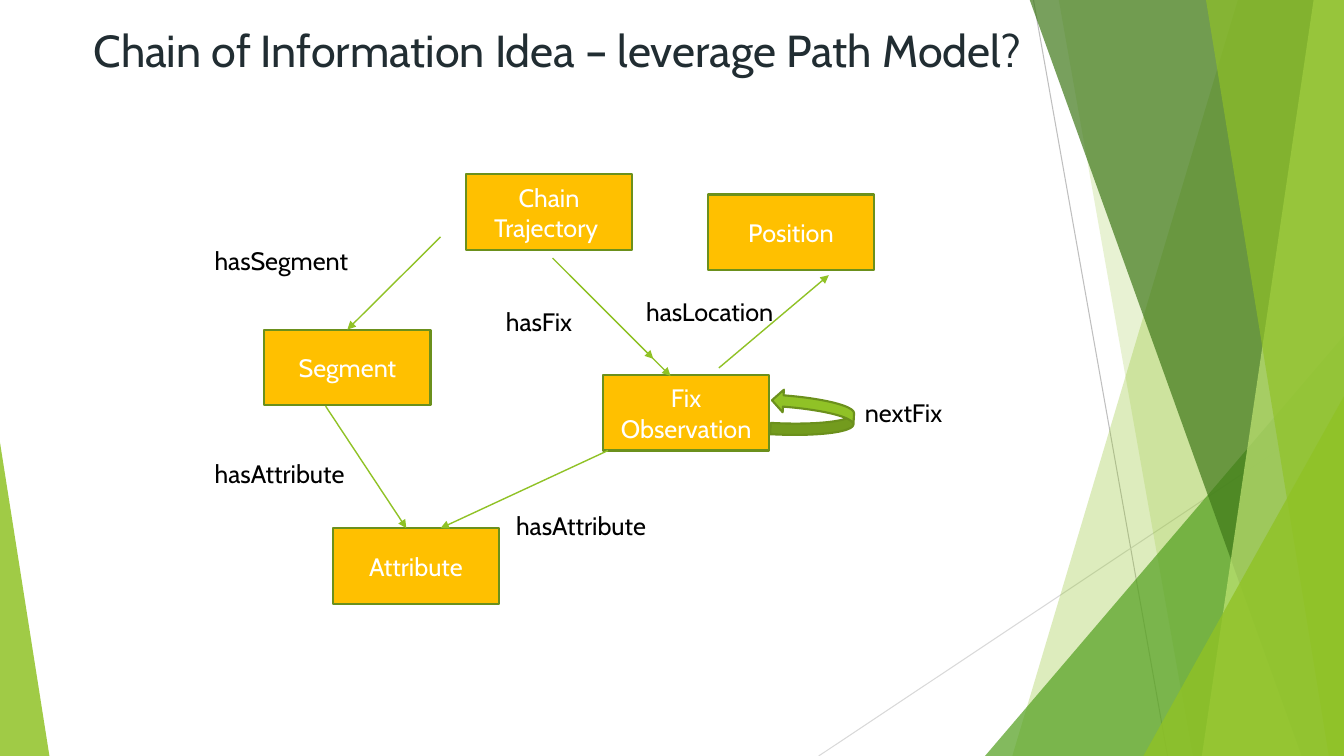
"""Build the slide about the chain of information idea."""
from lxml.etree import SubElement
from pptx import Presentation
from pptx.dml.color import RGBColor
from pptx.enum.shapes import MSO_CONNECTOR as Connector, MSO_SHAPE as Preset
from pptx.enum.text import MSO_ANCHOR as Anchor, PP_ALIGN as Align
from pptx.oxml.ns import qn
from pptx.util import Pt

PX = 9144
FONT = "Cabin"
COLORS = {
    "lime": "90C226", "green": "54A021", "forest": "3F7819", "pale": "C0E474",
    "gray": "BFBFBF", "light gray": "D9D9D9", "gold": "FFC000",
    "outline": "6B901C", "title": "212D32", "white": "FFFFFF", "black": "000000",
}


def paint(shape, color, opacity=100, outline=None):
    shape.shadow.inherit = False
    shape.fill.solid()
    shape.fill.fore_color.rgb = RGBColor.from_string(COLORS[color])
    if opacity < 100:
        fill_color = shape._element.spPr.find(qn("a:solidFill"))[0]
        SubElement(fill_color, qn("a:alpha"), val=str(opacity * 1000))
    if outline:
        shape.line.color.rgb = RGBColor.from_string(COLORS[outline])
        shape.line.width = Pt(1.5)
    else:
        shape.line.fill.background()


def add_line(points, color, width, arrow=False):
    line = shapes.add_connector(Connector.STRAIGHT, *[value * PX for value in points])
    line.line.color.rgb = RGBColor.from_string(COLORS[color])
    line.line.width = Pt(width)
    if arrow:
        SubElement(line.line._get_or_add_ln(), qn("a:tailEnd"), type="triangle")
    SubElement(line._element.spPr, qn("a:effectLst"))
    return line


presentation = Presentation()
presentation.slide_width = 1333 * PX
presentation.slide_height = 750 * PX
slide = presentation.slides.add_slide(presentation.slide_layouts[5])
shapes = slide.shapes

add_line((1025, 0, 1158, 750), "gray", 0.75)
add_line((1333, 403, 812, 750), "light gray", 0.75)

BANDS = [
    (1228, 1004, "lime", 30),
    (1050, 1183, "lime", 20),
    ("triangle", (977, 333, 356, 417), 1, "green", 72),
    (1021, 1291, "forest", 70),
    (1303, 1192, "pale", 70),
    (1196, 1318, "lime", 65),
    ("triangle", (1134, 393, 199, 357), 1, "lime", 80),
    ("triangle", (0, 439, 49, 311), 0, "lime", 85),
]
for *outline, color, opacity in BANDS:
    if outline[0] == "triangle":
        _, box, peak = outline
        band = shapes.add_shape(Preset.ISOSCELES_TRIANGLE, *[value * PX for value in box])
        band.adjustments[0] = peak
    else:
        top_left, bottom_left = outline
        builder = shapes.build_freeform(top_left, -1, scale=PX)
        builder.add_line_segments([(1333, -1), (1333, 750), (bottom_left, 750)])
        band = builder.convert_to_shape()
    paint(band, color, opacity)

title = shapes.title
title.left, title.top, title.width, title.height = [
    value * PX for value in (19, 18, 1068, 94)]
title.text_frame.text = "Chain of Information Idea – leverage Path Model?"
title.text_frame.vertical_anchor = Anchor.TOP
heading = title.text_frame.paragraphs[0]
heading.alignment = Align.CENTER
heading.font.name = FONT
heading.font.size = Pt(32)
heading.font.color.rgb = RGBColor.from_string(COLORS["title"])
shapes._spTree.append(title._element)

CONCEPTS = [
    ("Chain\nTrajectory ", 462, 173),
    ("Attribute", 330, 524),
    ("Position", 702, 193),
    ("Fix Observation", 598, 372),
    ("Segment", 262, 327),
]
texts = []
concepts = {}
for name, left, top in CONCEPTS:
    concept = shapes.add_shape(Preset.RECTANGLE, left * PX, top * PX, 165 * PX, 75 * PX)
    paint(concept, "gold", outline="outline")
    concept.text_frame.text = name
    concept.text_frame.word_wrap = True
    concept.text_frame.vertical_anchor = Anchor.MIDDLE
    concepts[name] = concept
    texts.append((concept.text_frame, "white", Align.CENTER))

RELATIONS = [
    (548, 256, 648, 356),
    (565, 273, 665, 373),
    (323, 403, 403, 524),
    (713, 365, 822, 273),
    (603, 447, 437, 524),
]
for points in RELATIONS:
    add_line(points, "lime", 1, arrow=True)
has_segment = add_line((437, 235, 345, 327), "lime", 1, arrow=True)
has_segment.end_connect(concepts["Segment"], 0)

next_fix = shapes.add_shape(
    Preset.CURVED_RIGHT_ARROW, 765 * PX, 388 * PX, 82 * PX, 45 * PX)
next_fix.rotation = 183.1
paint(next_fix, "lime", outline="outline")

LABELS = [
    ("hasLocation", 631, 289, 168),
    ("hasFix", 492, 299, 104),
    ("hasAttribute", 203, 450, 172),
    ("hasSegment", 203, 238, 180),
    ("hasAttribute", 502, 501, 172),
    ("nextFix", 848, 389, 104),
]
for name, left, top, width in LABELS:
    label = shapes.add_textbox(left * PX, top * PX, width * PX, 40 * PX)
    label.text_frame.text = name
    label.text_frame.word_wrap = True
    texts.append((label.text_frame, "black", Align.LEFT))

for frame, color, alignment in texts:
    for paragraph in frame.paragraphs:
        paragraph.alignment = alignment
        paragraph.font.name = FONT
        paragraph.font.size = Pt(18)
        paragraph.font.color.rgb = RGBColor.from_string(COLORS[color])

presentation.save("out.pptx")
